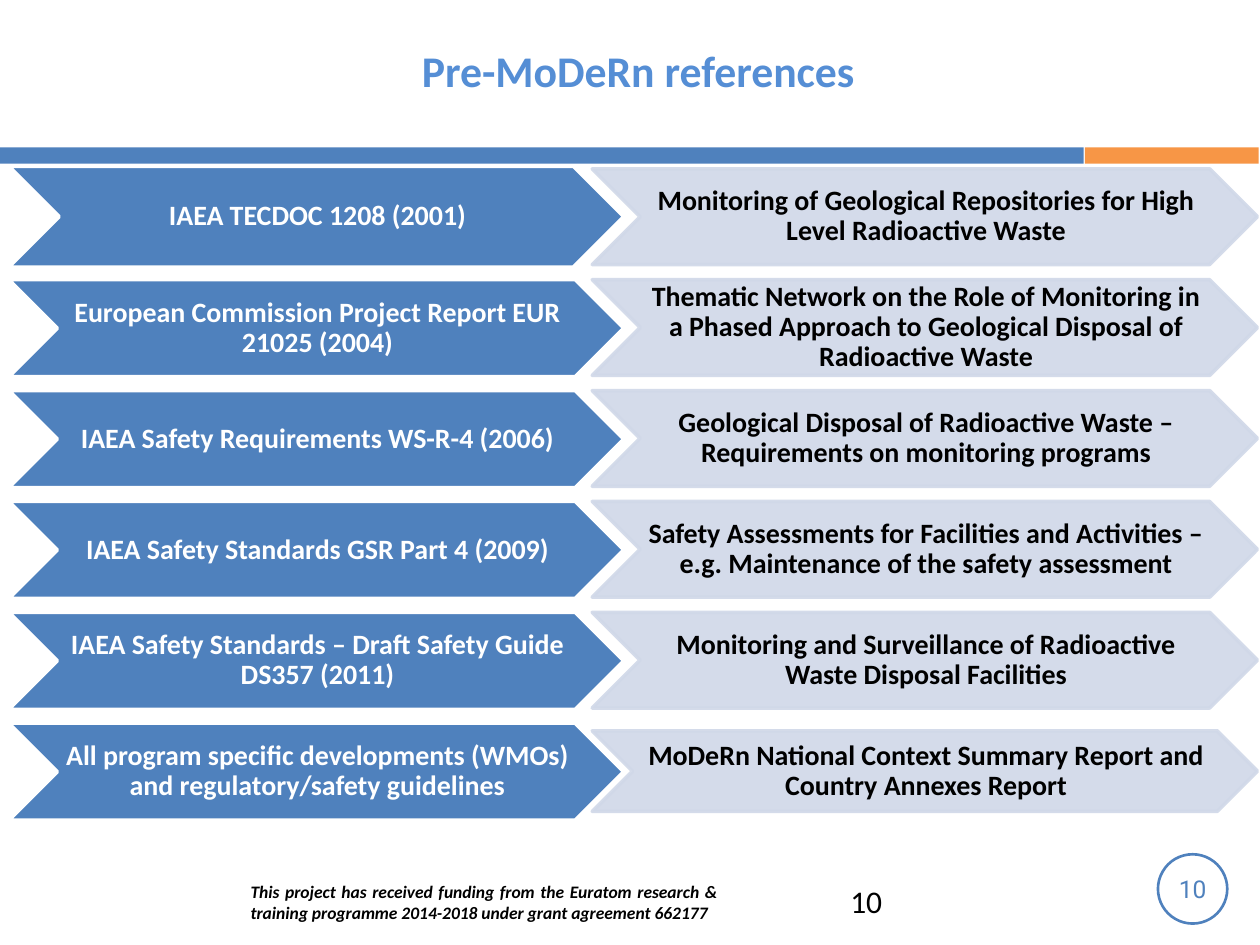
from lxml.etree import SubElement
from pptx import Presentation
from pptx.dml.color import RGBColor as Rgb
from pptx.enum.shapes import MSO_SHAPE as Kind
from pptx.enum.text import MSO_ANCHOR as Anchor, PP_ALIGN as Align
from pptx.oxml.ns import qn
from pptx.util import Emu, Pt

SCALE = 9144  # EMU in one px, 100 px to the inch

BLUE = Rgb(0x4F, 0x81, 0xBD)
SKY = Rgb(0x55, 0x8E, 0xD5)
PALE = Rgb(0xD0, 0xD8, 0xE8)
ORANGE = Rgb(0xF7, 0x96, 0x46)
WHITE = Rgb(0xFF, 0xFF, 0xFF)
BLACK = Rgb(0x00, 0x00, 0x00)

# source, its subject, height of the left and right arrow
ROWS = [
    ("IAEA TECDOC 1208 (2001)",
     "Monitoring of Geological Repositories for High Level Radioactive Waste", 80, 76),
    ("European Commission Project Report EUR 21025 (2004)",
     "Thematic Network on the Role of Monitoring in a Phased Approach to "
     "Geological Disposal of Radioactive Waste", 77, 76),
    ("IAEA Safety Requirements WS-R-4 (2006)",
     "Geological Disposal of Radioactive Waste – Requirements on monitoring programs", 77, 76),
    ("IAEA Safety Standards GSR Part 4 (2009)",
     "Safety Assessments for Facilities and Activities – "
     "e.g. Maintenance of the safety assessment", 77, 76),
    ("IAEA Safety Standards – Draft Safety Guide DS357 (2011)",
     "Monitoring and Surveillance of Radioactive Waste Disposal Facilities", 77, 76),
    ("All program specific developments (WMOs) and regulatory/safety guidelines",
     "MoDeRn National Context Summary Report and Country Annexes Report", 77, 64),
]
FIRST, STEP = 172, 88  # middle of the first row, distance between rows


def px(*nums):
    return [Emu(n * SCALE) for n in nums]


def write(shape, text, size=16, color=BLACK, font="Calibri", bold=False, italic=False,
          align=Align.CENTER, anchor=Anchor.MIDDLE, pads=(10, 5, 10, 5), lead=None):
    frame = shape.text_frame
    frame.word_wrap = True
    frame.vertical_anchor = anchor
    (frame.margin_left, frame.margin_top,
     frame.margin_right, frame.margin_bottom) = px(*pads)
    para = frame.paragraphs[0]
    para.alignment = align
    if lead:
        para.line_spacing = lead
    run = para.add_run()
    run.text = text
    face = run.font
    face.name, face.size, face.bold, face.italic = font, Pt(size), bold, italic
    face.color.rgb = color


class Page:
    font = "Calibri"

    def __init__(self, deck):
        self.slide = deck.slides.add_slide(deck.slide_layouts[6])

    def shape(self, kind, box, fill=None, line=None, width=2):
        item = self.slide.shapes.add_shape(kind, *px(*box))
        item.shadow.inherit = False
        if fill is None:
            item.fill.background()
        else:
            item.fill.solid()
            item.fill.fore_color.rgb = fill
        if line is None:
            item.line.fill.background()
        else:
            item.line.color.rgb = line
            item.line.width = Pt(width)
        return item

    def label(self, box, text, **form):
        write(self.slide.shapes.add_textbox(*px(*box)), text, font=self.font, **form)

    def arrow(self, left, mid, wide, high, text, fill, line, color, alpha=None):
        """Chevron centred on the height mid."""
        item = self.shape(Kind.CHEVRON, (left, mid - high // 2, wide, high), fill, line)
        if alpha:
            for tint in item._element.spPr.iter(qn("a:srgbClr")):
                SubElement(tint, qn("a:alpha")).set("val", str(alpha * 1000))
        write(item, text, color=color, font=self.font, bold=True, pads=(2, 1, 0, 1), lead=0.9)

    def badge(self, box, text):
        ring = self.shape(Kind.OVAL, box, line=BLUE, width=1.5)
        write(ring, text, size=14, color=BLUE, font="Roboto", pads=(1, 1, 1, 1))


def main():
    deck = Presentation()
    deck.slide_width, deck.slide_height = px(1000, 750)
    page = Page(deck)

    page.shape(Kind.RECTANGLE, (861, 117, 138, 13), ORANGE)
    page.shape(Kind.RECTANGLE, (-2, 117, 862, 13), BLUE)
    page.badge((919, 678, 55, 55), "10")
    page.label((189, 694, 390, 44),
               "This project has received funding from the Euratom research & "
               "training programme 2014-2018 under grant agreement 662177",
               size=10, bold=True, italic=True, align=Align.JUSTIFY)
    page.label((130, 29, 753, 53), "Pre-MoDeRn references", size=25, color=SKY, bold=True)
    page.label((665, 695, 233, 40), "10", size=18, align=Align.LEFT, anchor=Anchor.TOP)

    for i, (source, topic, tall, low) in enumerate(ROWS):
        mid = FIRST + i * STEP
        page.arrow(7, mid, 488, tall, source, BLUE, WHITE, WHITE)
        page.arrow(470, mid, 528, low, topic, PALE, PALE, BLACK, alpha=90)

    deck.save("out.pptx")


if __name__ == "__main__":
    main()
